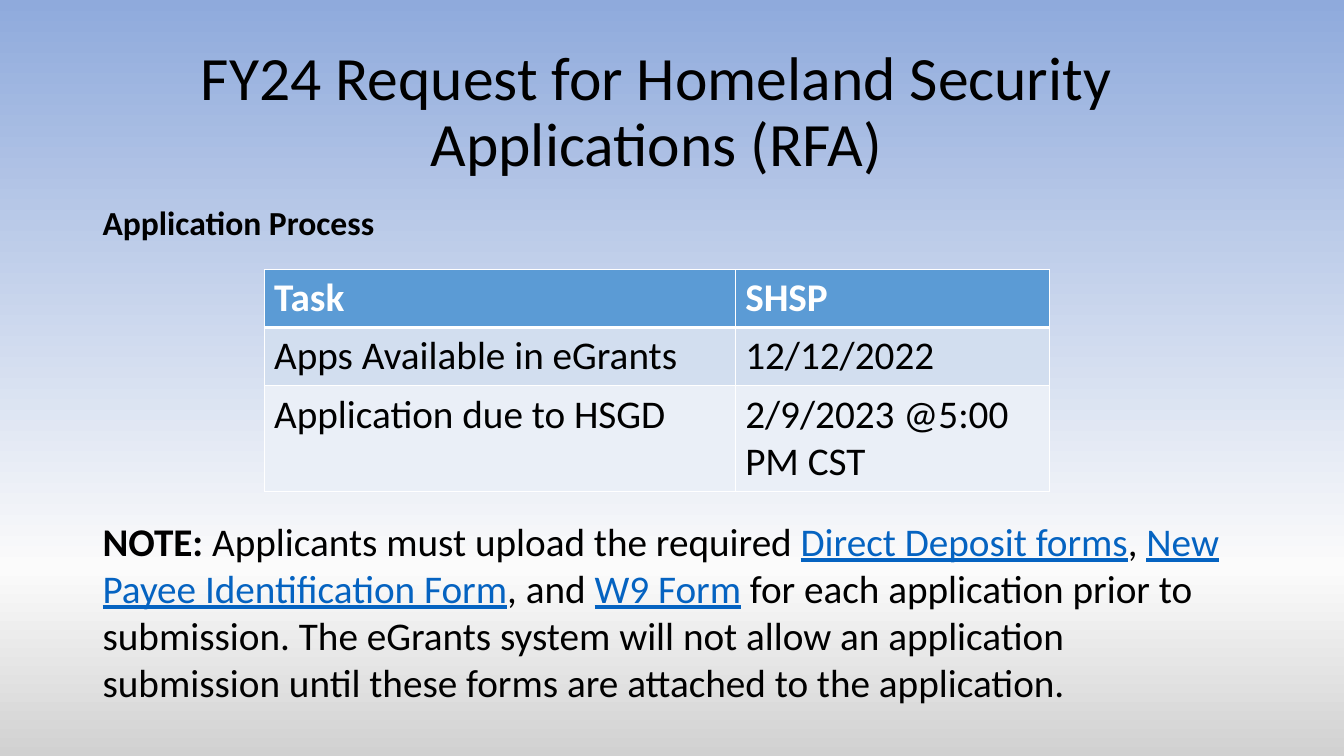
from copy import deepcopy
from dataclasses import dataclass

from lxml.etree import SubElement
from pptx import Presentation
from pptx.dml.color import RGBColor
from pptx.enum.text import MSO_ANCHOR, PP_ALIGN
from pptx.oxml.ns import qn
from pptx.util import Pt


@dataclass(frozen=True)
class Theme:
    font: str = "Calibri"
    ink: str = "000000"
    white: str = "FFFFFF"
    link: str = "0563C1"
    header: str = "5B9BD5"
    bands: tuple = ("D2DEEF", "EAEFF7")
    backdrop: tuple = ((0, "8FAADC"), (0.75, "FBFBFB"), (1, "D1D1D1"))
    title_size: int = 44
    label_size: int = 24
    text_size: int = 28


THEME = Theme()
TASKS = [
    ("Task", "SHSP"),
    ("Apps Available in eGrants", "12/12/2022"),
    ("Application due to HSGD", "2/9/2023 @5:00 PM CST"),
]
NOTE = [
    ("NOTE:", "bold"),
    (" Applicants must upload the required ", "plain"),
    ("Direct Deposit forms", "link"),
    (", ", "plain"),
    ("New Payee Identification Form", "link"),
    (", and ", "plain"),
    ("W9 Form", "link"),
    (" for each application prior to submission. The eGrants system will not "
     "allow an application submission until these forms are attached to the "
     "application.", "plain"),
]


def style_font(font, size, color=THEME.ink, bold=False):
    font.name = THEME.font
    font.size = Pt(size)
    font.bold = bold
    font.color.rgb = RGBColor.from_string(color)


def add_text(page, box, size, text="", bold=False, spacing=1.0):
    frame = page.shapes.add_textbox(*map(Pt, box)).text_frame
    frame.word_wrap = True
    para = frame.paragraphs[0]
    para.text = text
    para.line_spacing = spacing
    style_font(para.font, size, bold=bold)
    return frame


def paint_background(page):
    fill = page.background.fill
    fill.gradient()
    fill.gradient_angle = 270
    stop_list = page.element.xpath(".//a:gsLst")[0]
    stop_list.append(deepcopy(stop_list[0]))
    for stop, (position, color) in zip(fill.gradient_stops, THEME.backdrop):
        stop.position = position
        stop.color.rgb = RGBColor.from_string(color)


def add_title(page, box):
    frame = add_text(page, box, THEME.title_size,
                     "FY24 Request for Homeland Security Applications (RFA)",
                     spacing=0.9)
    frame.vertical_anchor = MSO_ANCHOR.MIDDLE
    frame.paragraphs[0].alignment = PP_ALIGN.CENTER


def add_border(cell, side, width):
    line = SubElement(cell._tc.get_or_add_tcPr(), qn(f"a:ln{side}"), w=str(Pt(width)))
    fill = SubElement(line, qn("a:solidFill"))
    SubElement(fill, qn("a:srgbClr"), val=THEME.white)


def add_task_table(page, box):
    left, top, width, height = box
    table = page.shapes.add_table(len(TASKS), 2, *map(Pt, box)).table
    for column, share in zip(table.columns, (0.6, 0.4)):
        column.width = Pt(width * share)
    single_line = 41.5
    for row, row_height in zip(table.rows, (single_line, single_line, height - 2 * single_line)):
        row.height = Pt(row_height)
    fills = (THEME.header, *THEME.bands)
    for row_index, texts in enumerate(TASKS):
        is_header = row_index == 0
        for column_index, text in enumerate(texts):
            cell = table.cell(row_index, column_index)
            cell.text = text
            style_font(cell.text_frame.paragraphs[0].font, THEME.text_size,
                       THEME.white if is_header else THEME.ink, is_header)
            widths = {"L": 1, "R": 1, "T": 3 if row_index == 1 else 1, "B": 3 if is_header else 1}
            for side, line_width in widths.items():
                add_border(cell, side, line_width)
            cell.fill.solid()
            cell.fill.fore_color.rgb = RGBColor.from_string(fills[row_index])


def add_note(page, box):
    para = add_text(page, box, THEME.text_size).paragraphs[0]
    for text, kind in NOTE:
        span = para.add_run()
        span.text = text
        is_link = kind == "link"
        style_font(span.font, THEME.text_size, THEME.link if is_link else THEME.ink, kind == "bold")
        span.font.underline = is_link


def build_schedule_slide(page, box):
    left, top, width, height = box
    paint_background(page)
    add_title(page, (left + 126, top + 28.8, 686.16, 104.4))
    add_text(page, (left + 66.24, top + 144, 828, 40), THEME.label_size,
             "Application Process", bold=True, spacing=0.9)
    add_task_table(page, (left + 188.64, top + 192.5, 560.88, 158.5))
    add_note(page, (left + 66.24, top + 365.76, 828, 143.28))


def main():
    deck = Presentation()
    deck.slide_width, deck.slide_height = Pt(960), Pt(540)
    page = deck.slides.add_slide(deck.slide_layouts[6])
    build_schedule_slide(page, (0, 0, 960, 540))
    deck.save("out.pptx")


if __name__ == "__main__":
    main()
